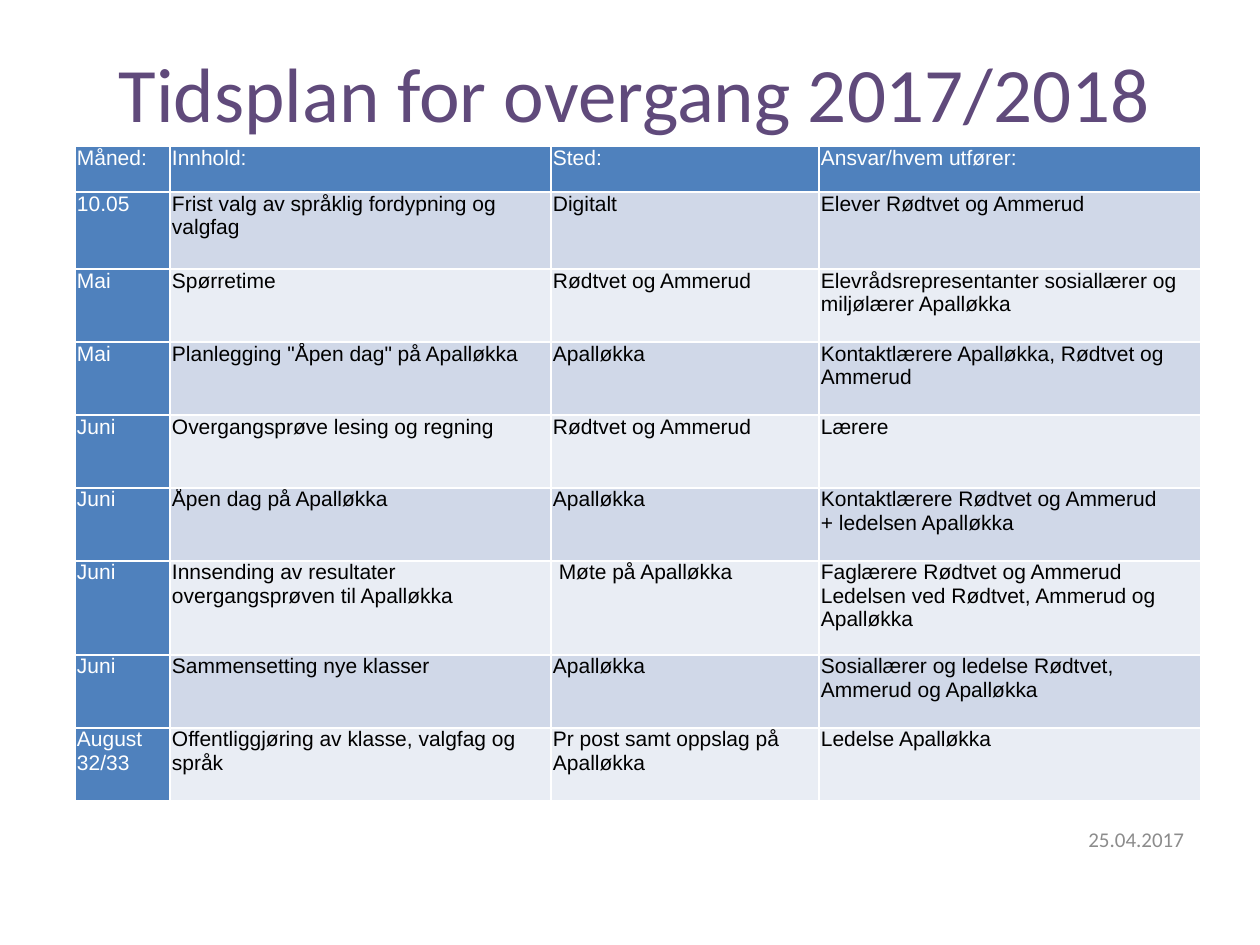
from lxml import etree
from pptx import Presentation
from pptx.dml.color import RGBColor
from pptx.enum.text import MSO_ANCHOR, PP_ALIGN
from pptx.oxml.ns import qn
from pptx.util import Emu, Pt

LEFT, CENTER = PP_ALIGN.LEFT, PP_ALIGN.CENTER
MIDDLE = MSO_ANCHOR.MIDDLE

COLUMN_WIDTHS = [95, 381, 268, 382]
ROW_HEIGHTS = [46, 77, 73, 73, 73, 73, 94, 73, 73]
SCHEDULE = [
    ["Måned:", "Innhold:", "Sted:", "Ansvar/hvem utfører:"],
    ["10.05", "Frist valg av språklig fordypning og valgfag", "Digitalt",
     "Elever Rødtvet og Ammerud"],
    ["Mai", "Spørretime", "Rødtvet og Ammerud",
     "Elevrådsrepresentanter sosiallærer og miljølærer Apalløkka"],
    ["Mai", 'Planlegging "Åpen dag" på Apalløkka', "Apalløkka",
     "Kontaktlærere Apalløkka, Rødtvet og Ammerud"],
    ["Juni", "Overgangsprøve lesing og regning", "Rødtvet og Ammerud", "Lærere"],
    ["Juni", "Åpen dag på Apalløkka", "Apalløkka",
     "Kontaktlærere Rødtvet og Ammerud\n+ ledelsen Apalløkka"],
    ["Juni", "Innsending av resultater overgangsprøven til Apalløkka",
     " Møte på Apalløkka",
     "Faglærere Rødtvet og Ammerud\nLedelsen ved Rødtvet, Ammerud og Apalløkka"],
    ["Juni", "Sammensetting nye klasser", "Apalløkka",
     "Sosiallærer og ledelse Rødtvet, Ammerud og Apalløkka"],
    ["August 32/33", "Offentliggjøring av klasse, valgfag og språk",
     "Pr post samt oppslag på Apalløkka", "Ledelse Apalløkka"],
]


def px(n):
    return Emu(round(n * 914400 / 126))


def rgb(value):
    return RGBColor.from_string(value)


class SlideBuilder:
    heading_font, table_font = "Calibri", "Arial"
    purple, gray, white, black = "604A7B", "8C8C8C", "FFFFFF", "000000"
    blue, bands = "4F81BD", ("E9EDF4", "D0D8E8")

    def __init__(self, slide):
        self.slide = slide

    def style(self, tf, font, size, color, align=LEFT):
        for p in tf.paragraphs:
            p.alignment = align
            for r in p.runs:
                r.font.name = font
                r.font.size = Pt(size)
                r.font.bold = False
                r.font.color.rgb = rgb(color)

    def text(self, x, y, w, h, text, size, color, align=LEFT):
        tf = self.slide.shapes.add_textbox(px(x), px(y), px(w), px(h)).text_frame
        tf.word_wrap = True
        tf.vertical_anchor = MIDDLE
        tf.text = text
        self.style(tf, self.heading_font, size, color, align)

    def borders(self, cell):
        tc_pr = cell._tc.get_or_add_tcPr()
        for side in ("a:lnL", "a:lnR", "a:lnT", "a:lnB"):
            ln = etree.SubElement(tc_pr, qn(side), w=str(Pt(1)))
            fill = etree.SubElement(ln, qn("a:solidFill"))
            etree.SubElement(fill, qn("a:srgbClr"), val=self.white)

    def cell(self, cell, text, fill, color):
        cell.margin_left = cell.margin_right = px(2)
        cell.margin_top = cell.margin_bottom = 0
        self.borders(cell)
        cell.fill.solid()
        cell.fill.fore_color.rgb = rgb(fill)
        cell.text_frame.text = text
        self.style(cell.text_frame, self.table_font, 12, color)

    def table(self, x, y, widths, heights, rows):
        """Add a table with a blue first row and column and banded body rows."""
        table = self.slide.shapes.add_table(
            len(heights), len(widths), px(x), px(y),
            px(sum(widths)), px(sum(heights))).table
        for column, width in zip(table.columns, widths):
            column.width = px(width)
        for i, (height, row) in enumerate(zip(heights, rows)):
            table.rows[i].height = px(height)
            for j, text in enumerate(row):
                header = i == 0 or j == 0
                self.cell(table.cell(i, j), text,
                          self.blue if header else self.bands[i % 2],
                          self.white if header else self.black)


def main():
    prs = Presentation()
    prs.slide_width, prs.slide_height = px(1260), px(945)
    s = SlideBuilder(prs.slides.add_slide(prs.slide_layouts[6]))
    s.text(1076, 814, 152, 50, "25.04.2017", 12, s.gray)
    s.text(64, 37, 1142, 110, "Tidsplan for overgang 2017/2018", 44, s.purple, CENTER)
    s.table(75, 146, COLUMN_WIDTHS, ROW_HEIGHTS, SCHEDULE)
    prs.save("out.pptx")


if __name__ == "__main__":
    main()
